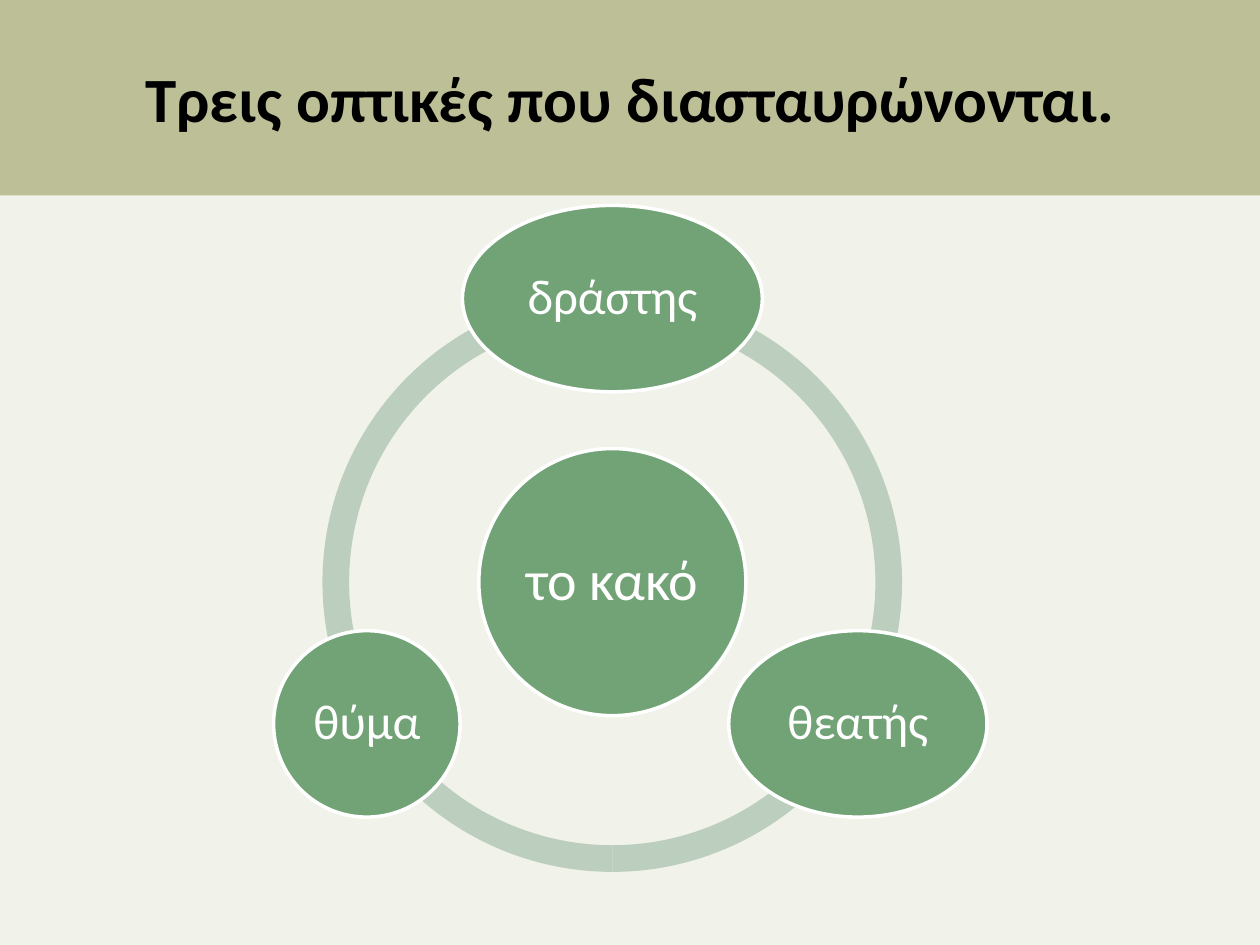
from dataclasses import dataclass
from math import cos, radians, sin

from pptx import Presentation
from pptx.dml.color import RGBColor
from pptx.enum.shapes import MSO_SHAPE as Kind
from pptx.enum.text import MSO_ANCHOR as Anchor, PP_ALIGN as Align
from pptx.util import Inches, Pt

PAPER = RGBColor(0xF1, 0xF2, 0xE9)
BAND = RGBColor(0xBD, 0xC0, 0x97)
RING = RGBColor(0xBC, 0xCE, 0xBD)
GREEN = RGBColor(0x72, 0xA3, 0x76)
WHITE = RGBColor(0xFF, 0xFF, 0xFF)
BLACK = RGBColor(0x00, 0x00, 0x00)

FONT = "Calibri"
WIDE, HIGH = 10, 7.5
MID_X, MID_Y = 0.486 * WIDE, 0.616 * HIGH  # centre of the ring
ORBIT = 0.3 * HIGH  # from the centre to each outer node
SPAN = 0.46 * WIDE  # outer width of the ring
THICK = 0.046  # ring thickness as a share of its width
NODE_H = 1.48


@dataclass
class Node:
    text: str
    wide: float
    high: float
    size: int
    turn: float = 0  # degrees, clockwise from the right
    reach: float = 0  # distance from the centre


NODES = [
    Node("το κακό", 2.12, 2.12, 32),
    Node("δράστης", 2.38, NODE_H, 28, 270, ORBIT),
    Node("θεατής", 2.05, NODE_H, 28, 30, ORBIT),
    Node("θύμα", NODE_H, NODE_H, 28, 150, ORBIT),
]
ARCS = [(90, 162), (18, 90), (162, 18)]


def add_form(slide, kind: Kind, x: float, y: float, wide: float, high: float,
             fill: RGBColor):
    """Add a plain filled shape centred on x, y."""
    form = slide.shapes.add_shape(
        kind, Inches(x - wide / 2), Inches(y - high / 2),
        Inches(wide), Inches(high))
    form.shadow.inherit = False
    form.fill.solid()
    form.fill.fore_color.rgb = fill
    form.line.fill.background()
    return form


def add_text(form, text: str, size: int, color: RGBColor,
             bold: bool = False) -> None:
    frame = form.text_frame
    frame.word_wrap = True
    frame.vertical_anchor = Anchor.MIDDLE
    para = frame.paragraphs[0]
    para.alignment = Align.CENTER
    run = para.add_run()
    run.text = text
    run.font.name = FONT
    run.font.size = Pt(size)
    run.font.bold = bold
    run.font.color.rgb = color


def add_arc(slide, start: float, end: float) -> None:
    arc = add_form(slide, Kind.BLOCK_ARC, MID_X, MID_Y, SPAN, SPAN, RING)
    # Angles are stored in 60000ths of a degree, adjustments in 100000ths
    arc.adjustments[0] = start * 0.6
    arc.adjustments[1] = end * 0.6
    arc.adjustments[2] = THICK


def add_node(slide, node: Node) -> None:
    x = MID_X + node.reach * cos(radians(node.turn))
    y = MID_Y + node.reach * sin(radians(node.turn))
    oval = add_form(slide, Kind.OVAL, x, y, node.wide, node.high, GREEN)
    oval.line.color.rgb = WHITE
    oval.line.width = Pt(2)
    add_text(oval, node.text, node.size, WHITE)
    frame = oval.text_frame
    frame.margin_left = frame.margin_right = Inches(0.04)
    frame.margin_top = frame.margin_bottom = Inches(0.04)
    frame.paragraphs[0].line_spacing = 0.9


def main() -> None:
    deck = Presentation()
    deck.slide_width, deck.slide_height = Inches(WIDE), Inches(HIGH)
    slide = deck.slides.add_slide(deck.slide_layouts[6])
    back = slide.background.fill
    back.solid()
    back.fore_color.rgb = PAPER

    # Title band
    high = 1.55
    band = add_form(slide, Kind.RECTANGLE, WIDE / 2, high / 2, WIDE, high, BAND)
    add_text(band, "Τρεις οπτικές που διασταυρώνονται.", 36, BLACK, True)

    # Ring, then the nodes on top of it
    for start, end in ARCS:
        add_arc(slide, start, end)
    for node in NODES:
        add_node(slide, node)

    deck.save("out.pptx")


if __name__ == "__main__":
    main()
